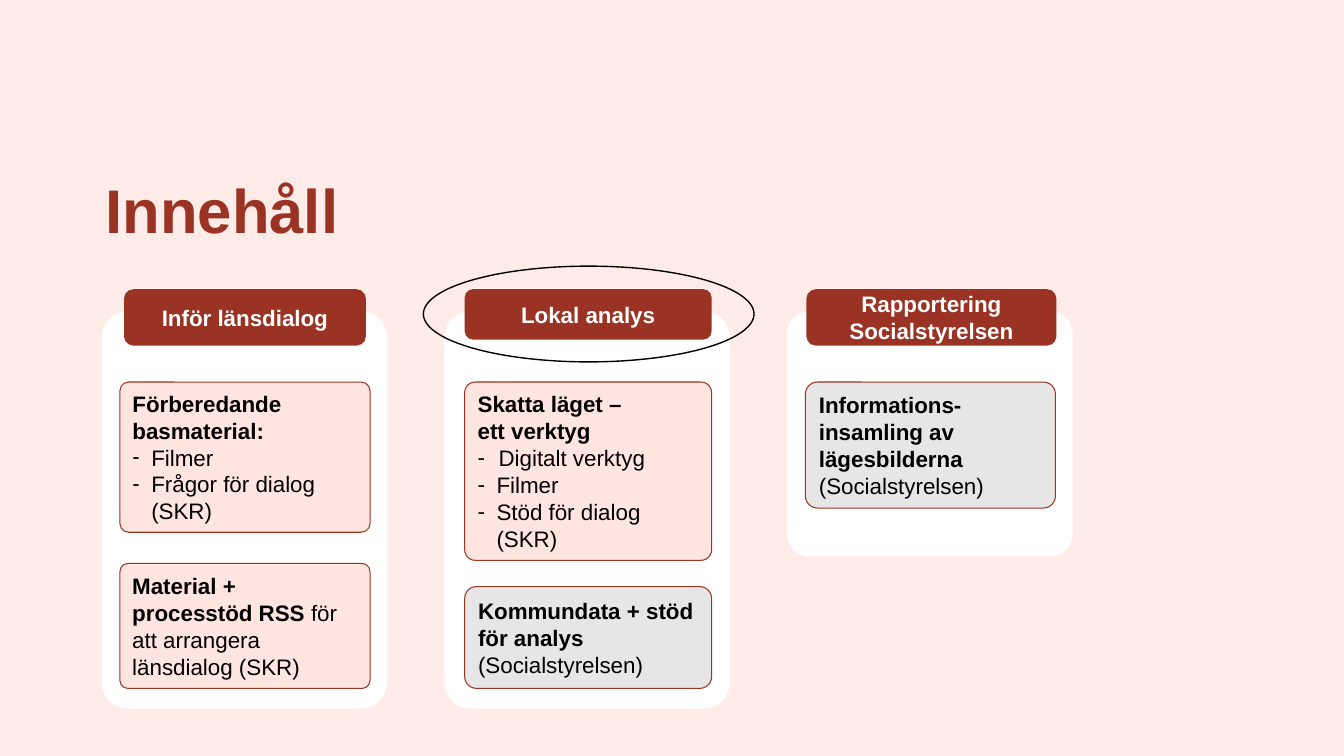
"""Build the slide "Innehåll" with three columns of cards."""
from lxml import etree
from pptx import Presentation
from pptx.dml.color import RGBColor
from pptx.enum.shapes import MSO_SHAPE
from pptx.enum.text import MSO_ANCHOR, PP_ALIGN
from pptx.oxml.ns import qn
from pptx.util import Pt

ROUND, OVAL = MSO_SHAPE.ROUNDED_RECTANGLE, MSO_SHAPE.OVAL
MIDDLE, BOTTOM = MSO_ANCHOR.MIDDLE, MSO_ANCHOR.BOTTOM
LEFT, CENTER = PP_ALIGN.LEFT, PP_ALIGN.CENTER
BLACK = RGBColor(0x00, 0x00, 0x00)
WHITE = RGBColor(0xFF, 0xFF, 0xFF)
RUST = RGBColor(0x9A, 0x33, 0x24)
BLUSH = RGBColor(0xFF, 0xEB, 0xE8)
PINK = RGBColor(0xFF, 0xE5, 0xDF)
GREY = RGBColor(0xE7, 0xE6, 0xE6)

COLUMN_LEFT, COLUMN_STEP, COLUMN_WIDTH, COLUMN_TOP = 72.7, 244.8, 203.8, 222.5
HEADER_TOP, CARD_TOP = 206.6, 272.9

COLUMNS = [
    (283.7, ("Inför länsdialog", 88.6, 172.8, 40.3), [
        (PINK, 85.7, CARD_TOP, 178.6, 107.3, 0.058, [
            (0, [("Förberedande basmaterial:", True)]),
            (13.5, [("Filmer", False)]),
            (13.5, [("Frågor för dialog (SKR)", False)])]),
        (PINK, 85.7, 402.5, 178.6, 89.3, 0.064, [
            (0, [("Material + processtöd RSS ", True),
                 ("för att arrangera länsdialog (SKR)", False)])])]),
    (283.7, ("Lokal analys", 331.9, 176.4, 36), [
        (PINK, 331.9, CARD_TOP, 176.4, 127.4, 0.059, [
            (0, [("Skatta läget –\nett verktyg", True)]),
            (15, [("Digitalt verktyg", False)]),
            (13.5, [("Filmer", False)]),
            (13.5, [("Stöd för dialog\n(SKR)", False)])]),
        (GREY, 331.9, 419, 176.4, 72.7, 0.116, [
            (0, [("Kommundata + stöd för analys ", True),
                 ("(Socialstyrelsen)", False)])])]),
    (175, ("Rapportering Socialstyrelsen", 576, 178.6, 40.3), [
        (GREY, 575.3, CARD_TOP, 178.6, 90, 0.096, [
            (0, [("Informations-insamling av lägesbilderna ", True),
                 ("(Socialstyrelsen)", False)])])]),
]


def write(tf, paragraphs, size=16, color=BLACK, align=LEFT, anchor=MIDDLE, spacing=None):
    """Fill a text frame with (bullet indent, [(text, bold), ...]) paragraphs."""
    tf.word_wrap = True
    tf.vertical_anchor = anchor
    for i, (indent, runs) in enumerate(paragraphs):
        p = tf.paragraphs[0] if i == 0 else tf.add_paragraph()
        p.alignment = align
        if spacing:
            p.line_spacing = spacing
        if indent:
            pPr = p._p.get_or_add_pPr()
            pPr.set("marL", str(Pt(indent)))
            pPr.set("indent", str(-Pt(indent)))
            etree.SubElement(pPr, qn("a:buFont")).set("typeface", "Arial")
            etree.SubElement(pPr, qn("a:buChar")).set("char", "-")
        for text, bold in runs:
            for n, line in enumerate(text.split("\n")):
                if n:
                    p.add_line_break()
                r = p.add_run()
                r.text = line
                r.font.name = "Arial"
                r.font.size = Pt(size)
                r.font.bold = bold
                r.font.color.rgb = color


class Deck:
    """Hold the presentation and the slide being drawn."""

    def __init__(self):
        """Start a widescreen slide with a tinted background."""
        self.prs = Presentation()
        self.prs.slide_width, self.prs.slide_height = Pt(960), Pt(540)
        self.s = self.prs.slides.add_slide(self.prs.slide_layouts[6])
        self.s.background.fill.solid()
        self.s.background.fill.fore_color.rgb = BLUSH

    def shape(self, kind, x, y, w, h, fill=None, line=None, width=0.75, adj=None):
        """Add a preset shape without shadow."""
        sp = self.s.shapes.add_shape(kind, Pt(x), Pt(y), Pt(w), Pt(h))
        sp.shadow.inherit = False
        if fill is None:
            sp.fill.background()
        else:
            sp.fill.solid()
            sp.fill.fore_color.rgb = fill
        if line is None:
            sp.line.fill.background()
        else:
            sp.line.color.rgb = line
            sp.line.width = Pt(width)
        if adj is not None:
            sp.adjustments[0] = adj
        return sp

    def title(self, text, x, y, w, h):
        """Add the slide heading."""
        sp = self.s.shapes.add_textbox(Pt(x), Pt(y), Pt(w), Pt(h))
        write(sp.text_frame, [(0, [(text, True)])], size=44, color=RUST,
              anchor=BOTTOM, spacing=0.9)

    def panel(self, x, h):
        """Add the white backing of a column."""
        self.shape(ROUND, x, COLUMN_TOP, COLUMN_WIDTH, h, fill=WHITE, adj=0.091)

    def header(self, text, x, w, h):
        """Add the label on top of a column."""
        sp = self.shape(ROUND, x, HEADER_TOP, w, h, fill=RUST)
        write(sp.text_frame, [(0, [(text, True)])], color=WHITE, align=CENTER)

    def card(self, fill, x, y, w, h, adj, paragraphs):
        """Add an outlined card with text."""
        sp = self.shape(ROUND, x, y, w, h, fill=fill, line=RUST, adj=adj)
        write(sp.text_frame, paragraphs)


def main():
    """Draw the slide and save it."""
    deck = Deck()
    deck.title("Innehåll", 68.4, 117.4, 389.5, 62.6)
    for i, (height, header, cards) in enumerate(COLUMNS):
        deck.panel(COLUMN_LEFT + i * COLUMN_STEP, height)
        for card in cards:
            deck.card(*card)
        deck.header(*header)
    deck.shape(OVAL, 302.4, 190.1, 236.2, 68.4, line=BLACK, width=1)
    deck.prs.save("out.pptx")


if __name__ == "__main__":
    main()
